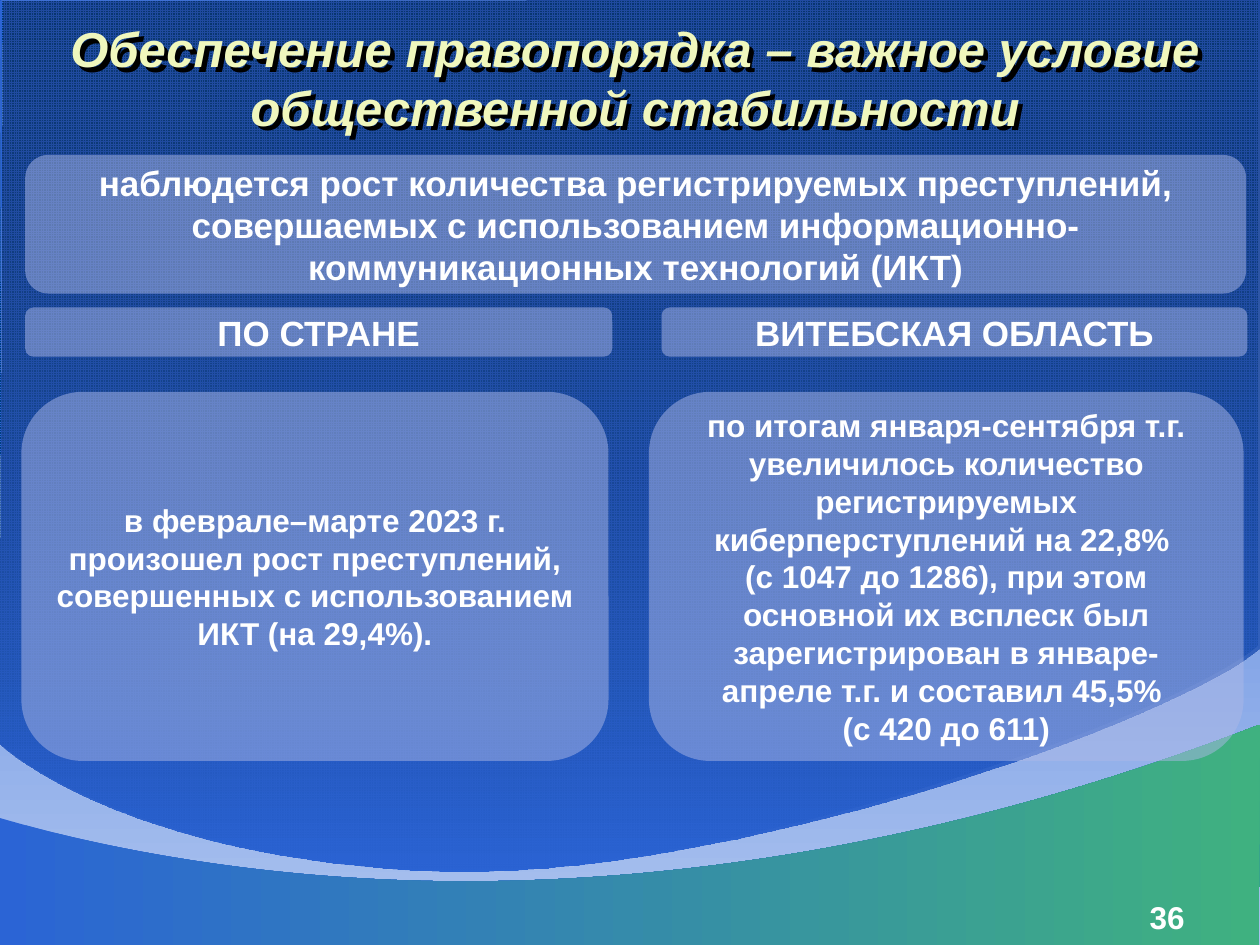
from dataclasses import dataclass
from typing import Optional

from lxml.etree import SubElement
from pptx import Presentation
from pptx.dml.color import RGBColor
from pptx.dml.fill import FillFormat
from pptx.enum.dml import MSO_PATTERN
from pptx.enum.shapes import MSO_SHAPE
from pptx.enum.text import MSO_ANCHOR, PP_ALIGN
from pptx.oxml.ns import qn
from pptx.util import Inches, Pt

COLORS = {
    "blue": "2B64D5", "pale": "ACC3EF", "grid": "003D7B", "navy": "142E62",
    "green": "3FB180", "panel": "ACB8E7", "title": "F0F7BD",
    "white": "FFFFFF", "shadow": "000000",
}
FONT = "Arial"
DOWN, RIGHT = 270, 0


@dataclass(frozen=True)
class Label:
    text: str
    left: float
    top: float
    width: float
    height: float
    size: int
    color: str = "white"
    align: PP_ALIGN = PP_ALIGN.CENTER
    anchor: MSO_ANCHOR = MSO_ANCHOR.MIDDLE
    italic: bool = False


@dataclass(frozen=True)
class Wave:
    start: tuple
    curves: tuple
    corners: tuple


GRID_WAVE = Wave((-0.01, 5.89),
                 (((0.11, 6.01), (1.1, 6.79), (3.42, 6.9)),
                  ((5.73, 6.99), (9.34, 5.68), (9.99, 5.12))),
                 ((9.99, -0.02), (0, -0.01), (0.01, 0.01)))
BLUE_WAVE = Wave((0, 5.9),
                 (((0.12, 6.02), (1.12, 6.81), (3.43, 6.91)),
                  ((5.75, 7.01), (9.36, 5.7), (10, 5.14))),
                 ((10, -0.01), (0.02, 0.01), (0.03, 0.02)))
GREEN_WAVE = Wave((-0.01, 6.49),
                  (((0.11, 6.52), (1.29, 6.9), (3.05, 6.98)),
                   ((4.81, 7.06), (7.22, 6.83), (10, 5.75))),
                  ((9.99, 7.5), (-0.03, 7.5)))

TITLE = Label("Обеспечение правопорядка – важное условие общественной стабильности",
              0.04, 0, 10, 1.23, 28, color="title", italic=True)
PAGE_NUMBER = Label("36", 7.17, 7.08, 2.33, 0.27, 18,
                    align=PP_ALIGN.RIGHT, anchor=MSO_ANCHOR.TOP)
PANELS = (
    Label("наблюдется рост количества регистрируемых преступлений, совершаемых "
          "с использованием информационно-коммуникационных технологий (ИКТ)",
          0.2, 1.23, 9.69, 1.1, 20),
    Label("ПО СТРАНЕ", 0.2, 2.44, 4.66, 0.39, 20),
    Label("ВИТЕБСКАЯ ОБЛАСТЬ", 5.25, 2.44, 4.65, 0.39, 20),
    Label("в феврале–марте 2023 г. произошел рост преступлений, совершенных "
          "с использованием ИКТ (на 29,4%).", 0.17, 3.11, 4.66, 2.93, 18),
    Label("по итогам января-сентября т.г. увеличилось количество регистрируемых "
          "киберперступлений на 22,8% \v(с 1047 до 1286), при этом основной их "
          "всплеск был зарегистрирован в январе-апреле т.г. и составил 45,5% "
          "\v(с 420 до 611)", 5.15, 3.11, 4.72, 2.93, 18),
)


def rgb(name: str) -> RGBColor:
    """Return the named colour."""
    return RGBColor.from_string(COLORS[name])


def set_alpha(parent, percent: int) -> None:
    """Make the first colour inside an element translucent."""
    color = next(parent.iter(qn("a:srgbClr")))
    SubElement(color, qn("a:alpha"), val=str(percent * 1000))


def set_gradient(fill: FillFormat, start: str, end: str, angle: int) -> None:
    """Apply a two-colour linear gradient."""
    fill.gradient()
    fill.gradient_angle = angle
    for stop, name in zip(fill.gradient_stops, (start, end)):
        stop.color.rgb = rgb(name)


def add_wave(slide, wave: Wave):
    """Draw a closed outline whose first sides are cubic curves."""
    points = [point for curve in wave.curves for point in curve]
    builder = slide.shapes.build_freeform(*map(Inches, wave.start))
    builder.add_line_segments(
        [(Inches(x), Inches(y)) for x, y in (*points, *wave.corners)], close=True)
    shape = builder.convert_to_shape()
    sides = list(shape.element.iter(qn("a:lnTo")))
    for first in range(0, len(points), 3):
        trio = sides[first:first + 3]
        curve = trio[0].makeelement(qn("a:cubicBezTo"))
        trio[0].addprevious(curve)
        for side in trio:
            curve.append(side[0])
            side.getparent().remove(side)
    shape.shadow.inherit = False
    shape.line.fill.background()
    return shape


def add_label(slide, label: Label, panel: Optional[str] = None):
    """Draw text, on a translucent rounded panel if a colour is given."""
    box = tuple(map(Inches, (label.left, label.top, label.width, label.height)))
    if panel:
        shape = slide.shapes.add_shape(MSO_SHAPE.ROUNDED_RECTANGLE, *box)
        shape.shadow.inherit = False
        shape.fill.solid()
        shape.fill.fore_color.rgb = rgb(panel)
        set_alpha(shape.element.spPr, 50)
        shape.line.fill.background()
    else:
        shape = slide.shapes.add_textbox(*box)
    frame = shape.text_frame
    frame.word_wrap = True
    frame.vertical_anchor = label.anchor
    frame.text = label.text
    paragraph = frame.paragraphs[0]
    paragraph.alignment = label.align
    font = paragraph.font
    font.name, font.size = FONT, Pt(label.size)
    font.bold, font.italic = True, label.italic
    font.color.rgb = rgb(label.color)
    return shape


def add_text_shadow(shape) -> None:
    """Cast a hard shadow from the text of an unfilled box."""
    effects = SubElement(shape.element.spPr, qn("a:effectLst"))
    shadow = SubElement(effects, qn("a:outerShdw"), dist=str(Inches(0.05)),
                        dir="2700000", algn="ctr", rotWithShape="0")
    SubElement(shadow, qn("a:srgbClr"), val=COLORS["shadow"])


def main() -> None:
    """Build and save the slide."""
    deck = Presentation()
    deck.slide_width, deck.slide_height = Inches(10), Inches(7.5)
    slide = deck.slides.add_slide(deck.slide_layouts[6])
    set_gradient(slide.background.fill, "blue", "pale", DOWN)

    grid = add_wave(slide, GRID_WAVE).fill
    grid.patterned()
    grid.pattern = MSO_PATTERN.SMALL_GRID
    grid.fore_color.rgb, grid.back_color.rgb = rgb("blue"), rgb("grid")

    veil = add_wave(slide, BLUE_WAVE)
    set_gradient(veil.fill, "navy", "blue", DOWN)
    set_alpha(veil.element.spPr, 46)
    set_gradient(add_wave(slide, GREEN_WAVE).fill, "blue", "green", RIGHT)

    add_label(slide, PAGE_NUMBER)
    add_text_shadow(add_label(slide, TITLE))
    for panel in PANELS:
        add_label(slide, panel, "panel")
    deck.save("out.pptx")


if __name__ == "__main__":
    main()
